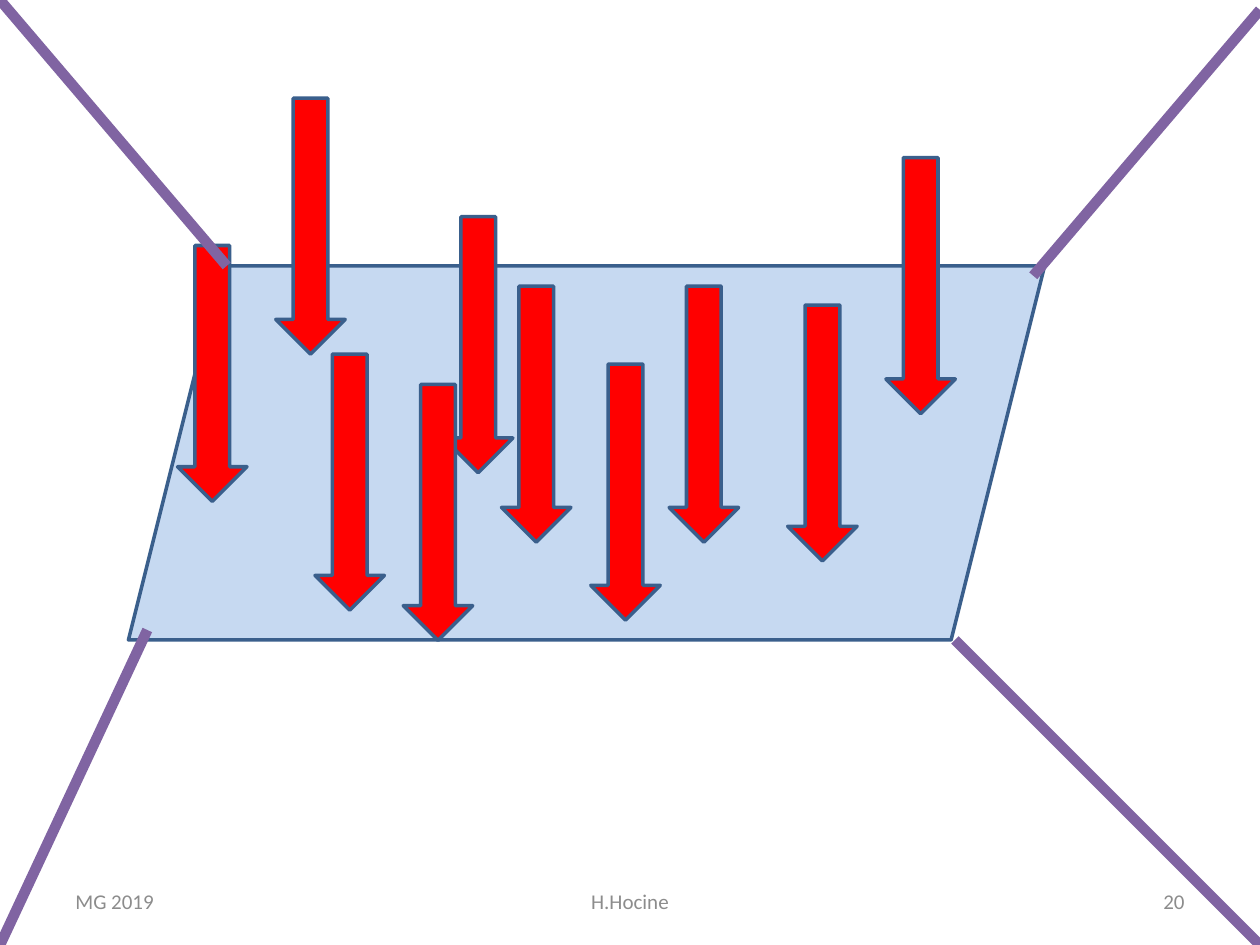
import dataclasses

import lxml.etree
import pptx
import pptx.dml.color
import pptx.enum.shapes
import pptx.enum.text
import pptx.oxml.ns
import pptx.util

Cm = pptx.util.Cm
Pt = pptx.util.Pt
Shape = pptx.enum.shapes.MSO_SHAPE
Align = pptx.enum.text.PP_ALIGN


def rgb(code):
    return pptx.dml.color.RGBColor.from_string(code)


@dataclasses.dataclass(frozen=True)
class Theme:
    font: str = "Calibri"
    footer_size: float = 12
    footer: str = "8C8C8C"
    surface: str = "C6D9F1"
    force: str = "FF0000"
    outline: str = "3A5F8C"
    outline_width: float = 2
    cable: str = "8064A2"
    cable_width: float = 6


class SlideBuilder:
    def __init__(self, slide, theme):
        self.slide = slide
        self.theme = theme

    def text(self, wording, left, top, width, height, alignment):
        box = self.slide.shapes.add_textbox(Cm(left), Cm(top), Cm(width), Cm(height))
        frame = box.text_frame
        frame.word_wrap = True
        frame.vertical_anchor = pptx.enum.text.MSO_ANCHOR.MIDDLE
        paragraph = frame.paragraphs[0]
        paragraph.alignment = alignment
        run = paragraph.add_run()
        run.text = wording
        font_format = {"name": self.theme.font, "size": Pt(self.theme.footer_size)}
        for attribute, value in font_format.items():
            setattr(run.font, attribute, value)
        run.font.color.rgb = rgb(self.theme.footer)

    def shape(self, preset, left, top, width, height, fill):
        figure = self.slide.shapes.add_shape(
            preset, Cm(left), Cm(top), Cm(width), Cm(height))
        figure.shadow.inherit = False
        figure.fill.solid()
        figure.fill.fore_color.rgb = rgb(fill)
        self.stroke(figure.line, self.theme.outline, self.theme.outline_width)

    def line(self, start, end):
        connector = self.slide.shapes.add_connector(
            pptx.enum.shapes.MSO_CONNECTOR.STRAIGHT,
            *(Cm(value) for value in (*start, *end)))
        self.stroke(connector.line, self.theme.cable, self.theme.cable_width)
        lxml.etree.SubElement(
            connector._element.spPr, pptx.oxml.ns.qn("a:effectLst"))

    def stroke(self, line, color, width):
        line.color.rgb = rgb(color)
        line.width = Pt(width)


def main():
    presentation = pptx.Presentation()
    presentation.slide_width = Cm(25.4)
    presentation.slide_height = Cm(19.05)
    theme = Theme()
    builder = SlideBuilder(
        presentation.slides.add_slide(presentation.slide_layouts[6]), theme)

    footers = [
        ("MG 2019", 1.27, 5.93, Align.LEFT),
        ("H.Hocine", 8.68, 8.04, Align.CENTER),
        ("20", 18.2, 5.93, Align.RIGHT),
    ]
    for wording, left, width, alignment in footers:
        builder.text(wording, left, 17.66, width, 1.01, alignment)

    builder.shape(Shape.PARALLELOGRAM, 2.59, 5.36, 18.47, 7.54, theme.surface)

    def draw_forces(positions):
        for left, top in positions:
            builder.shape(Shape.DOWN_ARROW, left, top, 1.4, 5.16, theme.force)

    draw_forces([
        (17.86, 3.18), (10.11, 5.77), (3.58, 4.95), (5.56, 1.98), (15.88, 6.15),
    ])

    cables = [
        ((20.83, 5.56), (25.4, 0.2)),
        ((0, 19.05), (2.97, 12.7)),
        ((0, 0), (4.57, 5.36)),
        ((19.25, 12.9), (25.4, 19.05)),
    ]
    for start, end in cables:
        builder.line(start, end)

    draw_forces([
        (6.35, 7.14), (11.91, 7.34), (8.94, 4.37), (13.49, 5.77), (8.13, 7.75),
    ])

    presentation.save("out.pptx")


if __name__ == "__main__":
    main()
